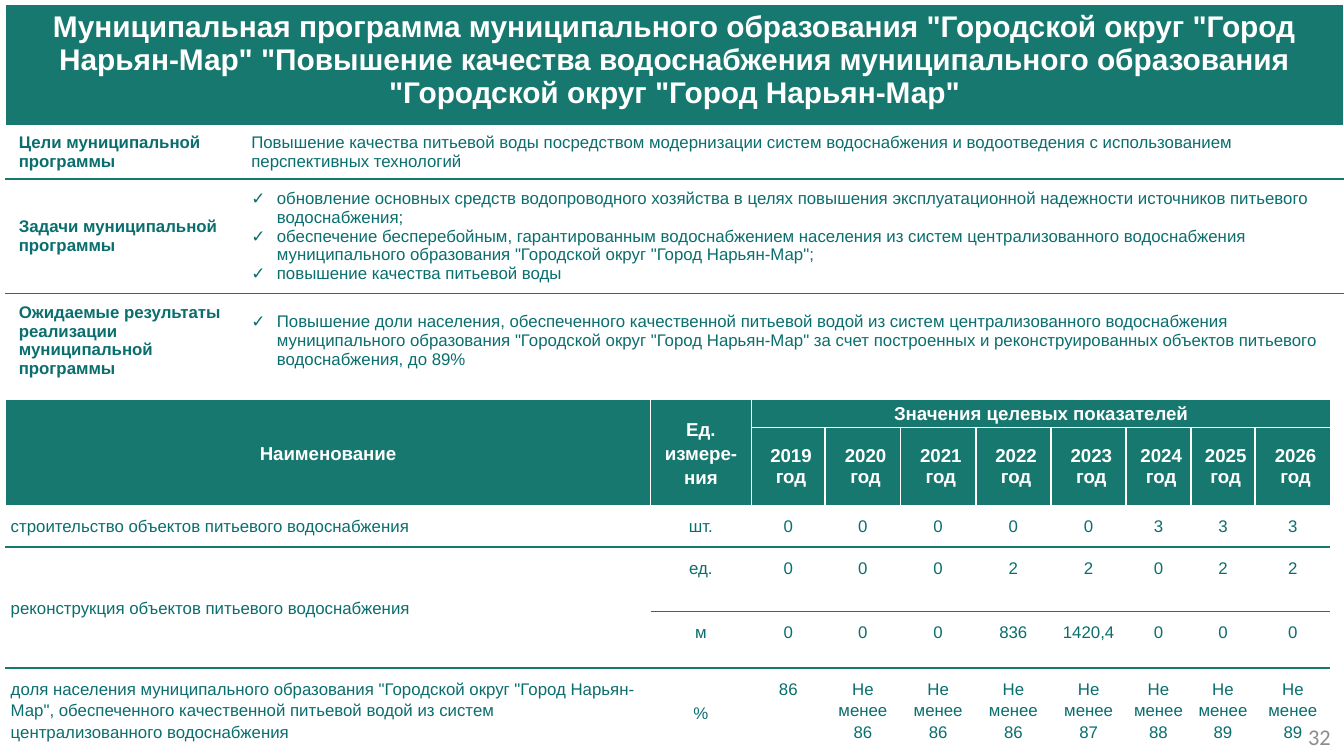
from lxml import etree
from pptx import Presentation, util as u
from pptx.dml.color import RGBColor
from pptx.enum import text
from pptx.oxml import ns

GREEN = RGBColor(0x16, 0x78, 0x6E)
TEAL = RGBColor(0x0A, 0x6E, 0x6E)
WHITE = RGBColor(0xFF, 0xFF, 0xFF)
GRAY = RGBColor(0x8C, 0x8C, 0x8C)
LEFT, CENTER, RIGHT = (text.PP_ALIGN.LEFT, text.PP_ALIGN.CENTER,
                       text.PP_ALIGN.RIGHT)
TOP, MIDDLE = text.MSO_ANCHOR.TOP, text.MSO_ANCHOR.MIDDLE

GOAL_ROWS = [
    ("Цели муниципальной программы",
     ["Повышение качества питьевой воды посредством модернизации систем водоснабжения и водоотведения с использованием перспективных технологий"]),
    ("Задачи муниципальной программы",
     ["обновление основных средств водопроводного хозяйства в целях повышения эксплуатационной надежности источников питьевого водоснабжения;",
      "обеспечение бесперебойным, гарантированным водоснабжением населения из систем централизованного водоснабжения муниципального образования \"Городской округ \"Город Нарьян-Мар\";",
      "повышение качества питьевой воды"]),
    ("Ожидаемые результаты реализации муниципальной программы",
     ["Повышение доли населения, обеспеченного качественной питьевой водой из систем централизованного водоснабжения муниципального образования \"Городской округ \"Город Нарьян-Мар\" за счет построенных и реконструированных объектов питьевого водоснабжения, до 89%"]),
]
TITLE = ("Муниципальная программа муниципального образования \"Городской округ \"Город Нарьян-Мар\" "
         "\"Повышение качества водоснабжения муниципального образования \"Городской округ \"Город Нарьян-Мар\"")
INDICATORS = [
    ["строительство объектов питьевого водоснабжения", "шт.",
     "0", "0", "0", "0", "0", "3", "3", "3"],
    ["реконструкция объектов питьевого водоснабжения", "ед.",
     "0", "0", "0", "2", "2", "0", "2", "2"],
    ["", "м", "0", "0", "0", "836", "1420,4", "0", "0", "0"],
    ["доля населения муниципального образования \"Городской округ \"Город Нарьян-Мар\", обеспеченного качественной питьевой водой из систем централизованного водоснабжения",
     "%", "86"] + [f"Не менее {n}" for n in (86, 86, 86, 87, 88, 89, 89)],
]


def add_bullet(p):
    pPr = p._p.get_or_add_pPr()
    pPr.set("marL", str(u.Inches(0.19)))
    pPr.set("indent", str(-u.Inches(0.19)))
    etree.SubElement(pPr, ns.qn("a:buFont")).set("typeface", "Arial")
    etree.SubElement(pPr, ns.qn("a:buChar")).set("char", "✓")


def write(tf, lines, size, color, bold=False, align=LEFT, spacing=1.0,
          bullets=False, name="Arial"):
    for i, line in enumerate(lines):
        p = tf.paragraphs[0] if i == 0 else tf.add_paragraph()
        p.alignment, p.line_spacing = align, spacing
        if bullets:
            add_bullet(p)
        r = p.add_run()
        r.text = line
        for key, value in {"size": u.Pt(size), "bold": bold, "name": name}.items():
            setattr(r.font, key, value)
        r.font.color.rgb = color


def style_cell(cell, fill=None, borders=None, anchor=MIDDLE,
               margins=(0.1, 0.05)):
    """Borders map sides L, R, T, B to colours; other sides stay empty."""
    dx, dy = margins
    for key, value in {"margin_left": dx, "margin_right": dx,
                       "margin_top": dy, "margin_bottom": dy}.items():
        setattr(cell, key, u.Inches(value))
    cell.vertical_anchor = anchor
    tcPr = cell._tc.get_or_add_tcPr()
    for side in "LRTB":
        ln = etree.SubElement(tcPr, ns.qn(f"a:ln{side}"), w=str(u.Pt(1)))
        color = (borders or {}).get(side)
        if color is None:
            etree.SubElement(ln, ns.qn("a:noFill"))
        else:
            solid = etree.SubElement(ln, ns.qn("a:solidFill"))
            etree.SubElement(solid, ns.qn("a:srgbClr"), val=str(color))
    if fill is None:
        cell.fill.background()
    else:
        cell.fill.solid()
        cell.fill.fore_color.rgb = fill


def new_table(s, box, cols, rows):
    frame = s.shapes.add_table(len(rows), len(cols),
                               *(u.Inches(v) for v in box))
    tbl = frame.table
    tbl.first_row = tbl.horz_banding = False
    for col, width in zip(tbl.columns, cols):
        col.width = u.Inches(width)
    for row, height in zip(tbl.rows, rows):
        row.height = u.Inches(height)
    # Rows grow with their text, so the frame keeps its own height
    frame.height = u.Inches(box[3])
    return tbl


def program_table(s, box):
    tbl = new_table(s, box, [1.73, 8.23], [0.83, 0.38, 0.65, 0.57])
    # Title band
    tbl.cell(0, 0).merge(tbl.cell(0, 1))
    for c in range(2):
        style_cell(tbl.cell(0, c), GREEN, dict.fromkeys("LRT", WHITE), TOP)
    write(tbl.cell(0, 0).text_frame, [TITLE], 16, WHITE, True, CENTER)
    # Goals, tasks and results
    for i, (label, lines) in enumerate(GOAL_ROWS, 1):
        borders = {"T": GREEN if i > 1 else None,
                   "B": GREEN if i < len(GOAL_ROWS) else None}
        for c in range(2):
            style_cell(tbl.cell(i, c), borders=borders)
        write(tbl.cell(i, 0).text_frame, [label], 9, TEAL, True)
        write(tbl.cell(i, 1).text_frame, lines, 9, TEAL, bullets=i > 1)


def indicator_table(s, box):
    cols = [4.8, 0.75, 0.55] + [0.56] * 4 + [0.48, 0.48, 0.56]
    tbl = new_table(s, box, cols, [0.06, 0.08, 0.28, 0.48, 0.42, 0.42])
    for first, last in (((0, 0), (1, 0)), ((0, 1), (1, 1)),
                        ((0, 2), (0, 9)), ((3, 0), (4, 0))):
        tbl.cell(*first).merge(tbl.cell(*last))
    # Header
    for r in range(2):
        for c in range(len(cols)):
            style_cell(tbl.cell(r, c), GREEN,
                       dict.fromkeys("LRTB" if r == 0 and c > 1 else "LRT", WHITE),
                       TOP if r == 0 and c > 1 else MIDDLE,
                       (0.08, 0) if c == 1 else (0, 0.01))
    for c, head in enumerate(("Наименование", "Ед. измере-ния",
                              "Значения целевых показателей")):
        write(tbl.cell(0, c).text_frame, [head], 10, WHITE, True, CENTER, 1.15)
    for c, year in enumerate(range(2019, 2027), 2):
        tf = tbl.cell(1, c).text_frame
        write(tf, [f"{year} год"], 10, WHITE, True, CENTER)
        tf.paragraphs[0]._p.get_or_add_pPr().set("marL", str(u.Inches(0.04)))
    # Indicator values
    for r, values in enumerate(INDICATORS, 2):
        for c, value in enumerate(values):
            cell = tbl.cell(r, c)
            middle = cell.is_merge_origin or value == "%"
            borders = {"T": GREEN if r > 2 and value else None,
                       "B": GREEN}
            style_cell(cell, borders=borders, anchor=MIDDLE if middle else TOP,
                       margins=(0.04, 0.04 if value == "%" else 0.07))
            if value:
                write(cell.text_frame, [value], 9, TEAL,
                      align=CENTER if c else LEFT, spacing=1.15)


def page_number(s, box):
    tf = s.shapes.add_textbox(*(u.Inches(v) for v in box)).text_frame
    tf.word_wrap = True
    tf.vertical_anchor = MIDDLE
    write(tf, ["32"], 12, GRAY, align=RIGHT, name="Calibri")


def main():
    prs = Presentation()
    prs.slide_width = u.Inches(10)
    prs.slide_height = prs.slide_width * 9 // 16
    s = prs.slides.add_slide(prs.slide_layouts[6])
    page_number(s, (7.67, 5.33, 2.33, 0.3))
    program_table(s, (0.04, 0.03, 9.96, 2.85))
    indicator_table(s, (0.04, 2.97, 9.86, 2.44))
    prs.save("out.pptx")


if __name__ == "__main__":
    main()
